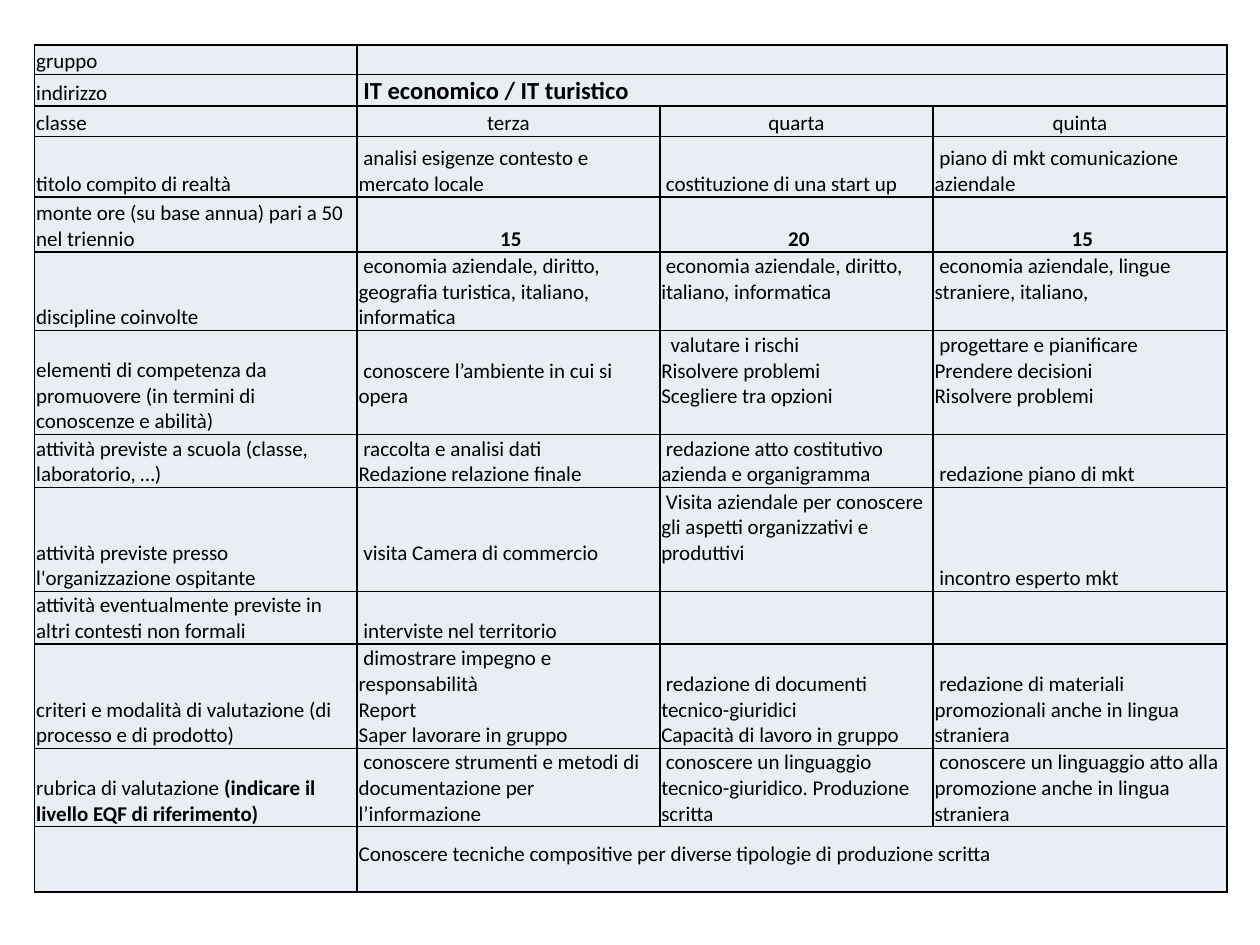
from lxml.etree import SubElement
from pptx import Presentation
from pptx.dml.color import RGBColor
from pptx.enum.text import MSO_ANCHOR as Anchor, PP_ALIGN as Align
from pptx.oxml import parse_xml
from pptx.oxml.ns import nsdecls, qn
from pptx.util import Cm, Pt

NB = chr(160)  # no-break space that opens most cells
WIDE = (6.5, 6.1, 5.51, 5.92)

# Row height in cm, label, then one text per class year
HEAD = [
    (0.59, "gruppo", ""),
    (0.62, "indirizzo", "IT economico / IT turistico"),
    (0.62, "classe", "terza", "quarta", "quinta"),
]
BODY = [
    (1.22, "titolo compito di realtà",
     "analisi esigenze contesto e mercato locale",
     "costituzione di una start up",
     "piano di mkt comunicazione aziendale"),
    (1.11, "monte ore (su base annua) pari a 50 nel triennio",
     "15", "20", "15"),
    (1.57, "discipline coinvolte",
     "economia aziendale, diritto, geografia turistica, italiano, informatica",
     "economia aziendale, diritto, italiano, informatica",
     "economia aziendale, lingue straniere, italiano,"),
    (2.1, "elementi di competenza da promuovere (in termini di conoscenze e abilità)",
     "conoscere l’ambiente in cui si opera",
     " valutare i rischi\nRisolvere problemi\nScegliere tra opzioni",
     "progettare e pianificare\nPrendere decisioni\nRisolvere problemi"),
    (1.05, "attività previste a scuola (classe, laboratorio, …)",
     "raccolta e analisi dati\nRedazione relazione finale",
     "redazione atto costitutivo azienda e organigramma",
     "redazione piano di mkt"),
    (2.1, "attività previste presso l'organizzazione ospitante",
     "visita Camera di commercio",
     "Visita aziendale per conoscere gli aspetti organizzativi e produttivi",
     "incontro esperto mkt"),
    (1.05, "attività eventualmente previste in altri contesti non formali",
     "interviste nel territorio", "", ""),
    (2.1, "criteri e modalità di valutazione (di processo e di prodotto)",
     "dimostrare impegno e responsabilità\nReport\nSaper lavorare in gruppo",
     "redazione di documenti tecnico-giuridici\nCapacità di lavoro in gruppo",
     "redazione di materiali promozionali anche in lingua straniera"),
    (1.57, "rubrica di valutazione ",
     "conoscere strumenti e metodi di documentazione per l’informazione",
     "conoscere un linguaggio tecnico-giuridico. Produzione scritta",
     "conoscere un linguaggio atto alla promozione anche in lingua straniera"),
]
FOOT = [(1.32, "", "Conoscere tecniche compositive per diverse tipologie di produzione scritta")]
ROWS = HEAD + BODY + FOOT

TITLE, YEAR, HOURS, RUBRIC, LAST = 1, 2, 4, 11, 12
# Cells whose text stands one line above the bottom
RAISED = {(5, 2), (5, 3), (6, 1), (6, 2), (6, 3), (8, 1), (8, 2), (LAST, 1)}


def color(code):
    return RGBColor.from_string(code)


def write(par, text, size=12, bold=False, font="Calibri", ink="000000"):
    run = par.add_run()
    run.text = text
    run.font.size, run.font.bold, run.font.name = Pt(size), bold, font
    run.font.color.rgb = color(ink)


class Page:
    fill, edge, line = "E9EDF4", "000000", 0.51

    def __init__(self, deck):
        self.slide = deck.slides.add_slide(deck.slide_layouts[6])

    def grid(self, left, top, wide, high):
        frame = self.slide.shapes.add_table(
            len(high), len(wide), Cm(left), Cm(top), Cm(sum(wide)), Cm(sum(high)))
        table = frame.table
        table.first_row = table.horz_banding = False
        for col, size in zip(table.columns, wide):
            col.width = Cm(size)
        for row, size in zip(table.rows, high):
            row.height = Cm(size)
        for cell in table.iter_cells():
            self.box(cell)
        return table

    def box(self, cell):
        cell.fill.solid()
        cell.fill.fore_color.rgb = color(self.fill)
        cell.vertical_anchor = Anchor.BOTTOM
        cell.margin_left = cell.margin_right = cell.margin_top = Cm(0.03)
        cell.margin_bottom = 0
        # Borders go before the fill
        props = cell._tc.get_or_add_tcPr()
        for spot, side in enumerate("LRTB"):
            props.insert(spot, parse_xml(
                f'<a:ln{side} {nsdecls("a")} w="12700"><a:solidFill>'
                f'<a:srgbClr val="{self.edge}"/></a:solidFill></a:ln{side}>'))

    def text(self, cell, text, lead="", align=Align.LEFT, raised=False, **form):
        frame = cell.text_frame
        if raised:
            cell.margin_bottom = Cm(self.line)
        if not text:
            SubElement(frame.paragraphs[0]._p, qn("a:endParaRPr"), sz="1200")
            return
        for num, part in enumerate(text.split("\n")):
            par = frame.add_paragraph() if num else frame.paragraphs[0]
            par.alignment = align
            if lead and not num:
                write(par, lead)
            write(par, part, **form)


def main():
    deck = Presentation()
    deck.slide_width, deck.slide_height = Cm(25.4), Cm(19.05)
    page = Page(deck)
    table = page.grid(0.7, 0.91, WIDE, [row[0] for row in ROWS])

    # Fill the cells; a lone text spans the three years
    for r, (_, *texts) in enumerate(ROWS):
        if len(texts) == 2:
            table.cell(r, 1).merge(table.cell(r, 3))
        for c, text in enumerate(texts):
            year = c > 0
            page.text(
                table.cell(r, c), text,
                lead=NB if year and r not in (YEAR, LAST) else "",
                align=Align.CENTER if year and r in (YEAR, HOURS) else Align.LEFT,
                raised=(r, c) in RAISED,
                size=14 if year and r == TITLE else 12,
                bold=year and r in (TITLE, HOURS))

    # Bold note after the rubric label
    label = table.cell(RUBRIC, 0).text_frame.paragraphs[0]
    write(label, "(indicare il livello EQF di riferimento)", bold=True)
    deck.save("out.pptx")


if __name__ == "__main__":
    main()
